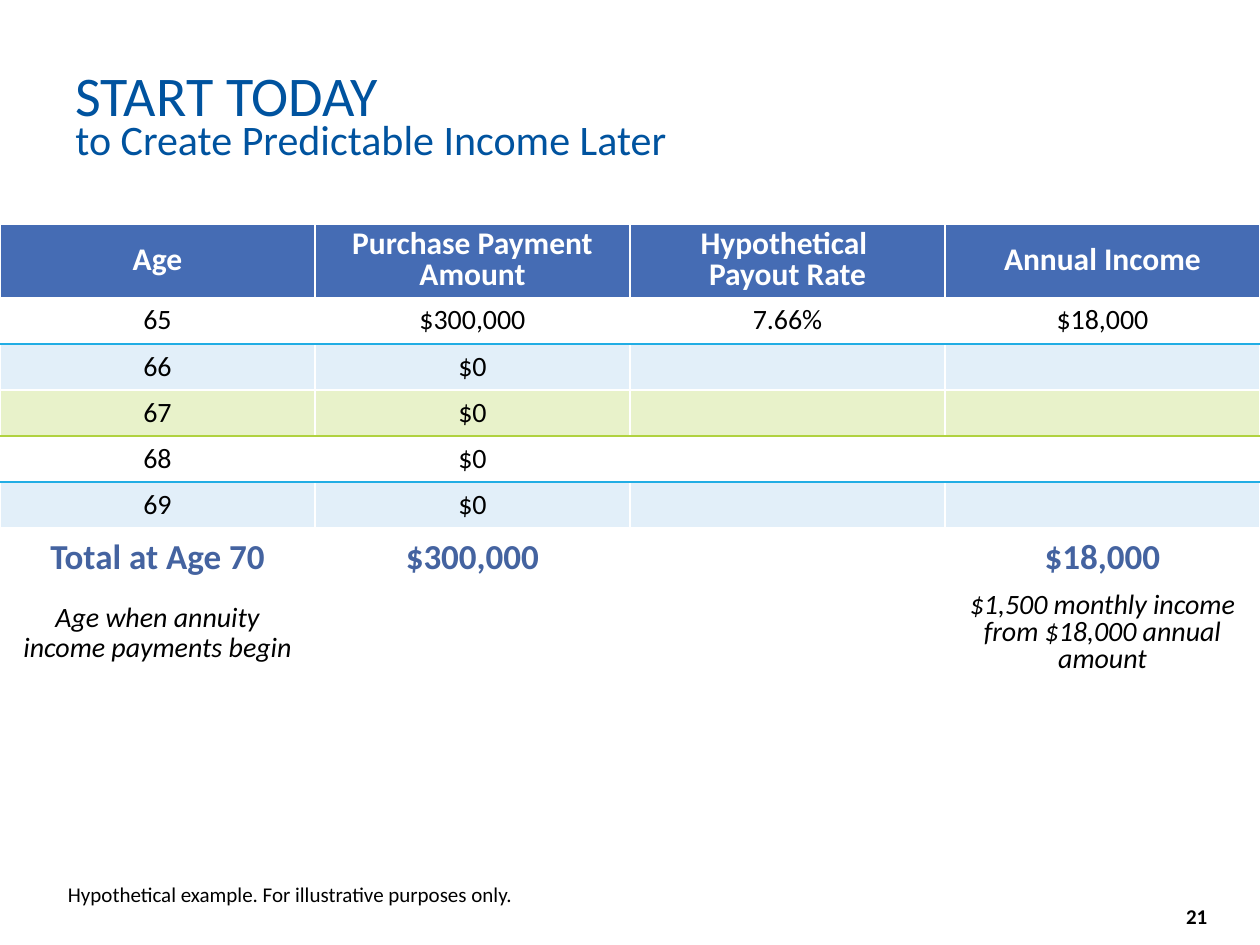
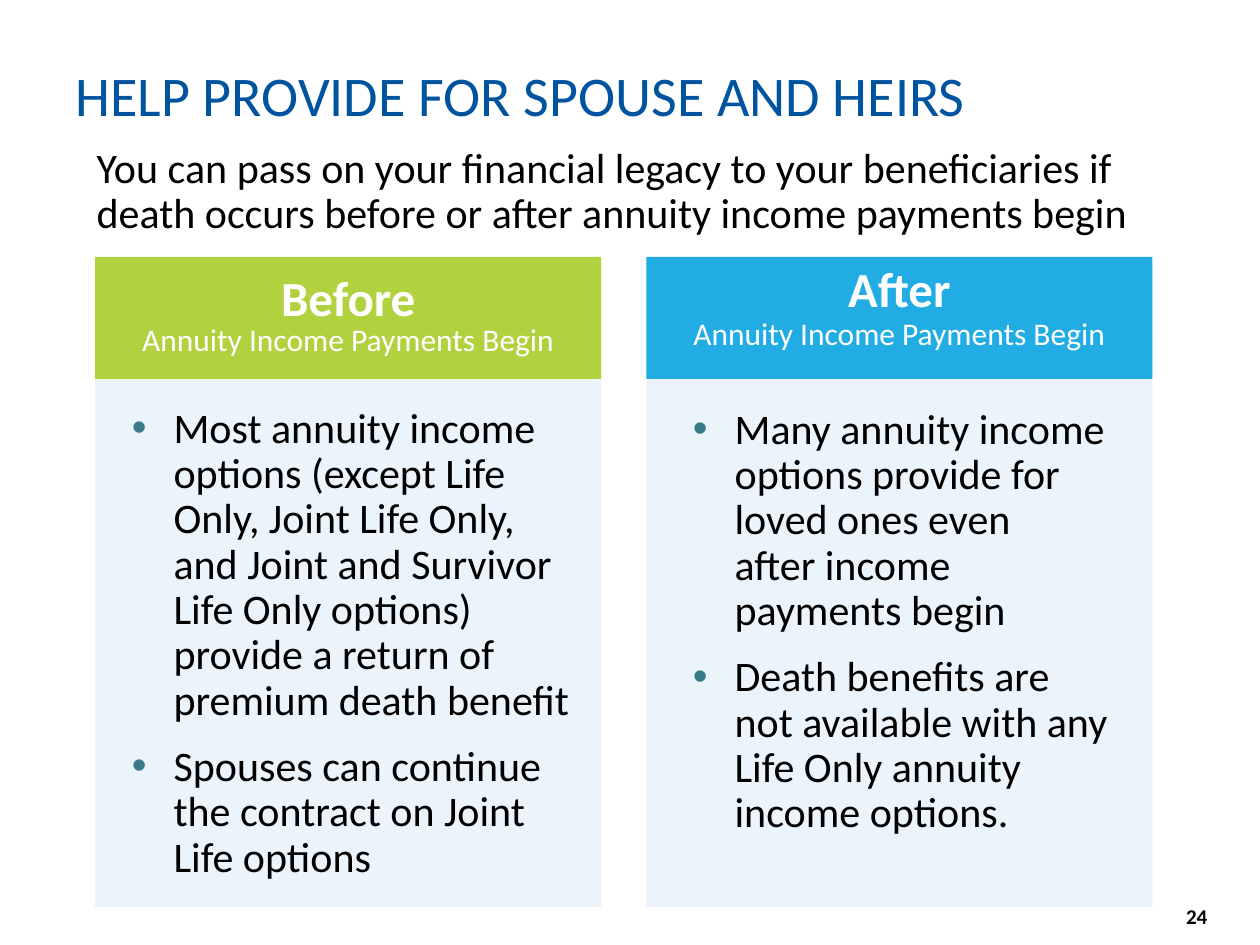
from lxml import etree
from pptx import Presentation
from pptx.dml.color import RGBColor
from pptx.enum import shapes, text
from pptx.oxml.ns import qn
from pptx.util import Cm, Pt

# Shared look
FONT = "Calibri"
TITLE_BLUE = RGBColor(0x00, 0x53, 0x9F)
HEADER_BLUE = RGBColor(0x45, 0x6C, 0xB4)
TOTAL_BLUE = RGBColor(0x44, 0x63, 0xA0)
SKY = RGBColor(0x21, 0xAD, 0xE4)
GREEN = RGBColor(0xB0, 0xD2, 0x3F)
PALE_BLUE = RGBColor(0xE2, 0xEF, 0xF9)
PALE_GREEN = RGBColor(0xE8, 0xF2, 0xCA)
PANEL = RGBColor(0xEB, 0xF4, 0xFB)
BULLET = RGBColor(0x39, 0x7B, 0x8A)
WHITE = RGBColor(0xFF, 0xFF, 0xFF)
BLACK = RGBColor(0, 0, 0)
LEFT, CENTER = text.PP_ALIGN.LEFT, text.PP_ALIGN.CENTER
MIDDLE = text.MSO_ANCHOR.MIDDLE


def style(p, size, color=BLACK, bold=False, italic=False, align=LEFT, spacing=None):
    p.alignment = align
    if spacing:
        p.line_spacing = spacing
    for r in p.runs:
        r.font.name, r.font.size = FONT, Pt(size)
        r.font.bold, r.font.italic = bold, italic
        r.font.color.rgb = color


def add_text(s, box, lines, size, **look):
    """Text box with one paragraph per line, all in one style."""
    sp = s.shapes.add_textbox(*map(Cm, box))
    tf = sp.text_frame
    tf.word_wrap = True
    tf.text = "\n".join(lines)
    for p in tf.paragraphs:
        style(p, size, **look)
    return tf


def add_slide(prs, title, number):
    s = prs.slides.add_slide(prs.slide_layouts[5])
    sp = s.shapes.title
    sp.left, sp.top, sp.width, sp.height = map(Cm, (1.27, 1.25, 22.86, 1.45))
    tf = sp.text_frame
    tf.text = title
    tf.auto_size = text.MSO_AUTO_SIZE.NONE
    tf.vertical_anchor = MIDDLE
    style(tf.paragraphs[0], 32, TITLE_BLUE, spacing=0.9)
    tf = add_text(s, (23.11, 18.03, 2.03, 0.76), [number], 12, bold=True, align=CENTER)
    tf.vertical_anchor = MIDDLE
    tf.margin_bottom = 0
    return s


def add_rect(s, box, color):
    sp = s.shapes.add_shape(shapes.MSO_SHAPE.RECTANGLE, *map(Cm, box))
    sp.shadow.inherit = False
    sp.fill.solid()
    sp.fill.fore_color.rgb = color
    sp.line.fill.background()


def set_border(cell, side, color, width):
    ln = etree.SubElement(cell._tc.get_or_add_tcPr(), qn("a:ln" + side), w=str(Pt(width)))
    fill = etree.SubElement(ln, qn("a:solidFill"))
    etree.SubElement(fill, qn("a:srgbClr"), val=str(color))


def add_income_table(s):
    white_line, blue_line, green_line = (WHITE, 1.5), (SKY, 1), (GREEN, 0.75)
    header = dict(size=18, color=WHITE, bold=True, spacing=0.8)
    body = dict(size=16, spacing=0.9)
    total = dict(size=20, color=TOTAL_BLUE, bold=True, spacing=0.9)
    note = dict(size=16, italic=True, spacing=0.9)
    # Cells, height in cm, fill, line below, text style
    rows = [
        (["Age", "Purchase Payment Amount", "Hypothetical \vPayout Rate", "Annual Income"],
         1.48, HEADER_BLUE, white_line, header),
        (["65", "$300,000", "7.66%", "$18,000"], 0.93, WHITE, blue_line, body),
        (["66", "$0", "", ""], 0.93, PALE_BLUE, white_line, body),
        (["67", "$0", "", ""], 0.93, PALE_GREEN, green_line, body),
        (["68", "$0", "", ""], 0.93, WHITE, blue_line, body),
        (["69", "$0", "", ""], 0.93, PALE_BLUE, white_line, body),
        (["Total at Age 70", "$300,000", "", "$18,000"], 1.2, WHITE, white_line, total),
        (["Age when annuity income payments begin", "", "",
          "$1,500 monthly income from $18,000 annual amount"], 1.83, WHITE, white_line, note),
    ]
    height = sum(row[1] for row in rows)
    table = s.shapes.add_table(len(rows), 4, 0, Cm(4.52), Cm(25.4), Cm(height)).table
    line_above = white_line
    for i, (values, row_height, fill, line_below, look) in enumerate(rows):
        table.rows[i].height = Cm(row_height)
        for j, value in enumerate(values):
            cell = table.cell(i, j)
            lines = zip("LRTB", (white_line, white_line, line_above, line_below))
            for side, line in lines:
                set_border(cell, side, *line)
            cell.fill.solid()
            cell.fill.fore_color.rgb = fill
            cell.margin_top = cell.margin_bottom = 0
            cell.vertical_anchor = MIDDLE
            p = cell.text_frame.paragraphs[0]
            p.text = value
            style(p, align=CENTER, **look)
        line_above = line_below
    # The longest note is set tighter
    table.cell(len(rows) - 1, 3).text_frame.paragraphs[0].line_spacing = 0.8


def add_bullets(s, box, items):
    tf = add_text(s, box, items, 24, spacing=0.9)
    for i, p in enumerate(tf.paragraphs):
        pPr = p._p.get_or_add_pPr()
        pPr.set("marL", str(Cm(0.84)))
        pPr.set("indent", str(-Cm(0.84)))
        color = etree.SubElement(pPr, qn("a:buClr"))
        etree.SubElement(color, qn("a:srgbClr"), val=str(BULLET))
        etree.SubElement(pPr, qn("a:buFont"), typeface="Arial")
        etree.SubElement(pPr, qn("a:buChar"), char="•")
        if i:
            p.space_before = Pt(12)


def add_panel(s, left, color, heading, heading_top, gap, bullet_box, items):
    """Pale panel with a coloured heading band and bullets."""
    width = 10.2
    add_rect(s, (left, 6.91, width, 11.38), PANEL)
    add_bullets(s, bullet_box, items)
    add_rect(s, (left, 5.18, width, 2.46), color)
    tf = add_text(s, (left, heading_top, width, 2.08),
                  [heading, "Annuity Income Payments Begin"], 18, color=WHITE, align=CENTER)
    style(tf.paragraphs[0], 28, WHITE, bold=True, align=CENTER)
    tf.paragraphs[1].line_spacing = Pt(18)
    tf.paragraphs[1].space_before = Pt(gap)


def build_income_slide(prs):
    s = add_slide(prs, "START TODAY", "21")
    add_text(s, (1.27, 2.16, 20.22, 1.27), ["to Create Predictable Income Later"], 24,
             color=TITLE_BLUE)
    add_income_table(s)
    add_text(s, (1.12, 17.65, 10.2, 0.76),
             ["Hypothetical example. For illustrative purposes only."], 12)


def build_heirs_slide(prs):
    s = add_slide(prs, "HELP PROVIDE FOR SPOUSE AND HEIRS", "24")
    add_panel(s, 1.92, GREEN, "Before", 5.26, 0, (2.41, 8.08, 9.5, 9.9), [
        "Most annuity income options (except Life Only, Joint Life Only, and Joint and "
        "Survivor Life Only options) provide a return of premium death benefit",
        "Spouses can continue the contract on Joint Life options"])
    add_panel(s, 13.03, SKY, "After", 5.08, 2, (13.72, 8.1, 8.86, 9), [
        "Many annuity income options provide for loved ones even \vafter income "
        "\vpayments begin",
        "Death benefits are not available with any Life Only annuity income options."])
    tf = add_text(s, (1.47, 2.72, 22.66, 2.36), [
        "You can pass on your financial legacy to your beneficiaries if death occurs "
        "before or after annuity income payments begin"], 24, spacing=0.9)
    tf.margin_left, tf.margin_top = Cm(0.48), Cm(0.25)


def main():
    prs = Presentation()
    prs.slide_width, prs.slide_height = Cm(25.4), Cm(19.05)
    build_income_slide(prs)
    build_heirs_slide(prs)
    prs.save("out.pptx")


if __name__ == "__main__":
    main()
